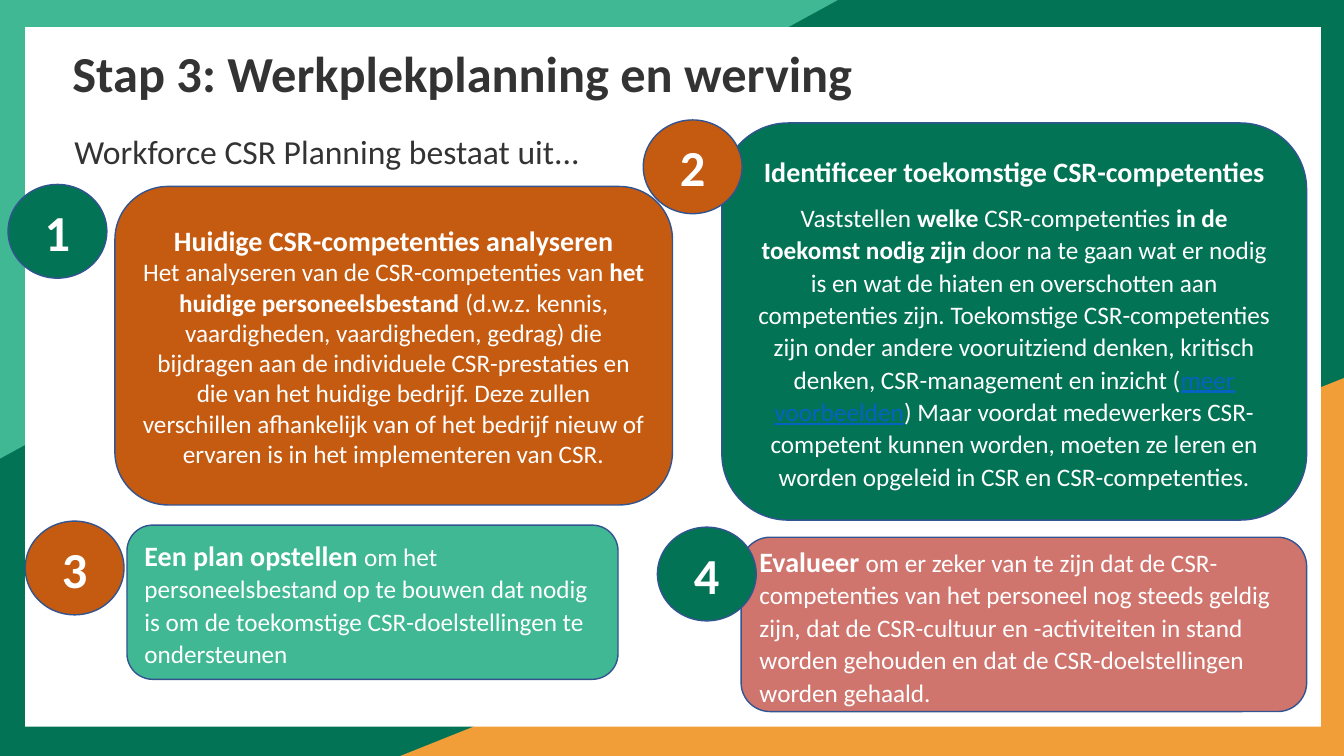
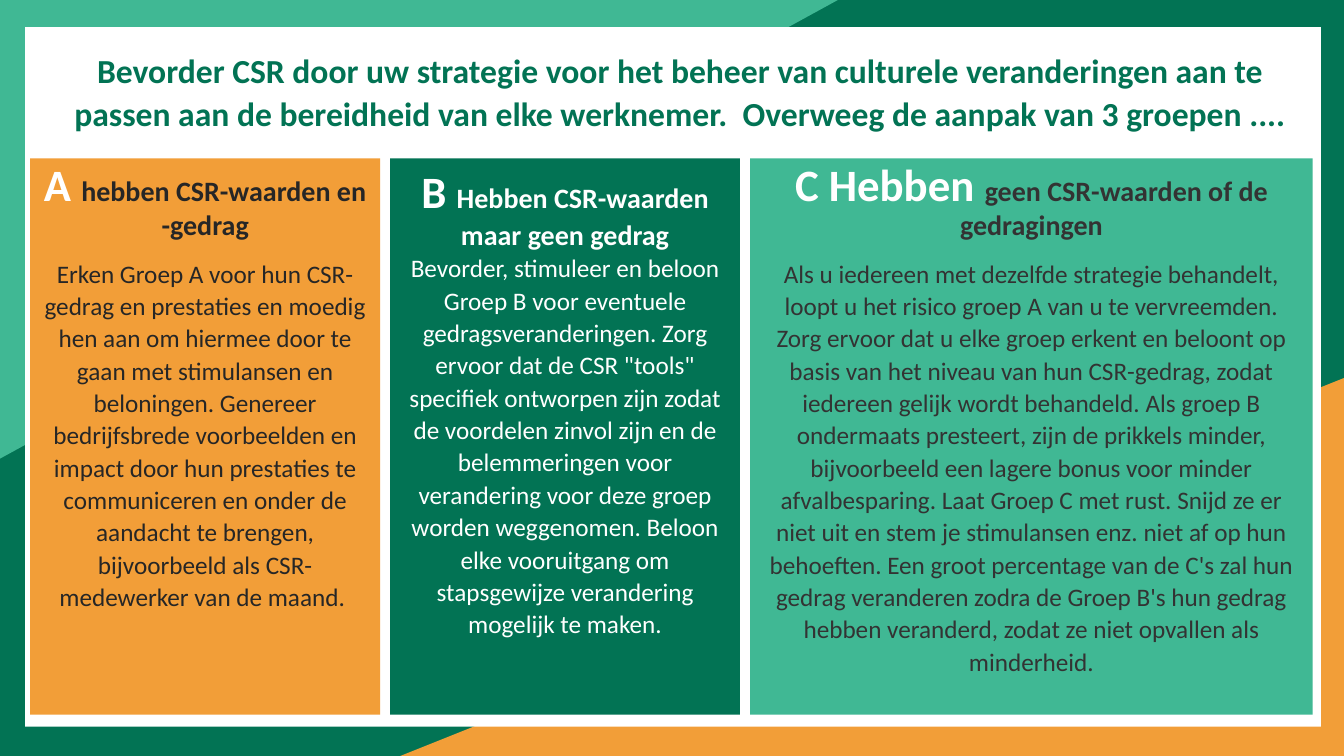
from pptx import Presentation
from pptx.dml.color import RGBColor
from pptx.enum.shapes import MSO_SHAPE as Shape
from pptx.enum.text import MSO_ANCHOR as Anchor, PP_ALIGN as Align
from pptx.util import Inches, Pt

# Shared look
WIDTH, HEIGHT = 13.33, 7.5
FONT = "Calibri"
GREEN = RGBColor(0x02, 0x73, 0x54)
MINT = RGBColor(0x40, 0xB8, 0x94)
ORANGE = RGBColor(0xF2, 0x9E, 0x38)
RUST = RGBColor(0xC5, 0x5A, 0x11)
ROSE = RGBColor(0xD0, 0x75, 0x6E)
OUTLINE = RGBColor(0x32, 0x54, 0x91)
LINK = RGBColor(0x05, 0x63, 0xC1)
INK = RGBColor(0x33, 0x33, 0x33)
DARK = RGBColor(0x26, 0x26, 0x26)
WHITE = RGBColor(0xFF, 0xFF, 0xFF)

# Run formats
HEAD = dict(size=20, bold=True)
BODY = dict(size=18)
STRONG = dict(size=18, bold=True)
LINKED = dict(size=18, color=LINK, underline=True)
LETTER = dict(size=32, bold=True, color=WHITE)
BADGE = dict(size=36, bold=True)

# Paragraph formats
PLAIN = {}
AIRY = dict(line=1.07, after=8.7)
TIGHT = dict(line=0.9, before=10)
LOOSE = dict(line=1.07, before=10, after=8.7)

# Slide 1 content
PLAN_TITLE = "Stap 3: Werkplekplanning en werving"
PLAN_INTRO = "Workforce CSR Planning bestaat uit..."
BADGE_SIZE = (0.98, 0.93)
STEPS = [
    dict(box=(1.14, 1.85, 5.53, 3.16), badge=(0.08, 1.83), fill=RUST,
         badge_fill=GREEN, align=Align.CENTER, text=[
             (PLAIN, [("Huidige CSR-competenties analyseren", HEAD)]),
             (PLAIN, [
                 ("Het analyseren van de CSR-competenties van ", BODY),
                 ("het huidige personeelsbestand ", STRONG),
                 ("(d.w.z. kennis, vaardigheden, vaardigheden, gedrag) die "
                  "bijdragen aan de individuele CSR-prestaties en die van het "
                  "huidige bedrijf. Deze zullen verschillen afhankelijk van of "
                  "het bedrijf nieuw of ervaren is in het implementeren van "
                  "CSR.", BODY)])]),
    dict(box=(7.16, 1.22, 5.8, 3.94), badge=(6.38, 1.19), fill=GREEN,
         badge_fill=RUST, align=Align.CENTER, text=[
             (AIRY, [("Identificeer toekomstige CSR-competenties", HEAD)]),
             (AIRY, [
                 ("Vaststellen ", BODY),
                 ("welke ", STRONG),
                 ("CSR-competenties ", BODY),
                 ("in de toekomst nodig zijn ", STRONG),
                 ("door na te gaan wat er nodig is en wat de hiaten en "
                  "overschotten aan competenties zijn. Toekomstige "
                  "CSR-competenties zijn onder andere vooruitziend denken, "
                  "kritisch denken, CSR-management en inzicht (", BODY),
                 ("meer voorbeelden", LINKED),
                 (") Maar voordat medewerkers CSR-competent kunnen worden, "
                  "moeten ze leren en worden opgeleid in CSR en "
                  "CSR-competenties.", BODY)])]),
    dict(box=(1.26, 5.21, 4.87, 1.53), badge=(0.25, 5.17), fill=MINT,
         badge_fill=RUST, align=Align.LEFT, text=[
             (AIRY, [
                 ("Een plan opstellen ", HEAD),
                 ("om het personeelsbestand op te bouwen dat nodig is om de "
                  "toekomstige CSR-doelstellingen te ondersteunen", BODY)])]),
    dict(box=(7.35, 5.33, 5.61, 1.73), badge=(6.52, 5.23), fill=ROSE,
         badge_fill=GREEN, align=Align.LEFT, text=[
             (AIRY, [
                 ("Evalueer ", HEAD),
                 ("om er zeker van te zijn dat de CSR-competenties van het "
                  "personeel nog steeds geldig zijn, dat de CSR-cultuur en "
                  "-activiteiten in stand worden gehouden en dat de "
                  "CSR-doelstellingen worden gehaald.", BODY)])]),
]

# Slide 2 content
GROUP_TITLE = ("Bevorder CSR door uw strategie voor het beheer van culturele "
               "veranderingen aan te passen aan de bereidheid van elke "
               "werknemer.  Overweeg de aanpak van 3 groepen ....")
GROUP_LEFT, GROUP_TOP, GROUP_HEIGHT, GROUP_GAP = 0.3, 1.57, 5.52, 0.1
GROUPS = [
    dict(width=3.47, fill=ORANGE, color=DARK, styles=(TIGHT, LOOSE),
         letter="A ", head="hebben CSR-waarden en -gedrag",
         body="Erken Groep A voor hun CSR-gedrag en prestaties en moedig hen "
              "aan om hiermee door te gaan met stimulansen en beloningen. "
              "Genereer bedrijfsbrede voorbeelden en impact door hun "
              "prestaties te communiceren en onder de aandacht te brengen, "
              "bijvoorbeeld als CSR-medewerker van de maand. "),
    dict(width=3.47, fill=GREEN, color=WHITE, styles=(PLAIN, AIRY),
         letter="B ", head="Hebben CSR-waarden maar geen gedrag",
         body="Bevorder, stimuleer en beloon Groep B voor eventuele "
              "gedragsveranderingen. Zorg ervoor dat de CSR \"tools\" "
              "specifiek ontworpen zijn zodat de voordelen zinvol zijn en de "
              "belemmeringen voor verandering voor deze groep worden "
              "weggenomen. Beloon elke vooruitgang om stapsgewijze "
              "verandering mogelijk te maken."),
    dict(width=5.58, fill=MINT, color=INK, styles=(TIGHT, LOOSE),
         letter="C Hebben ", head="geen CSR-waarden of de gedragingen",
         body="Als u iedereen met dezelfde strategie behandelt, loopt u het "
              "risico groep A van u te vervreemden. Zorg ervoor dat u elke "
              "groep erkent en beloont op basis van het niveau van hun "
              "CSR-gedrag, zodat iedereen gelijk wordt behandeld. Als groep B "
              "ondermaats presteert, zijn de prikkels minder, bijvoorbeeld "
              "een lagere bonus voor minder afvalbesparing. Laat Groep C met "
              "rust. Snijd ze er niet uit en stem je stimulansen enz. niet af "
              "op hun behoeften. Een groot percentage van de C's zal hun "
              "gedrag veranderen zodra de Groep B's hun gedrag hebben "
              "veranderd, zodat ze niet opvallen als minderheid."),
]


def write(holder, text, color=WHITE, align=Align.LEFT, anchor=Anchor.TOP):
    """Fill a shape with (paragraph format, [(words, run format)]) pairs."""
    frame = holder.text_frame
    frame.word_wrap = True
    frame.vertical_anchor = anchor
    for index, (style, runs) in enumerate(text):
        para = frame.add_paragraph() if index else frame.paragraphs[0]
        para.alignment = align
        para.line_spacing = style.get("line", 1.0)
        para.space_before = Pt(style.get("before", 0))
        para.space_after = Pt(style.get("after", 0))
        for words, look in runs:
            run = para.add_run()
            run.text = words
            font = run.font
            font.name, font.size = FONT, Pt(look["size"])
            font.bold = look.get("bold", False)
            font.underline = look.get("underline", False)
            font.color.rgb = look.get("color", color)


def draw(slide, kind, box, fill, outline=None):
    shape = slide.shapes.add_shape(kind, *map(Inches, box))
    shape.shadow.inherit = False
    shape.fill.solid()
    shape.fill.fore_color.rgb = fill
    if outline is None:
        shape.line.fill.background()
    else:
        shape.line.color.rgb = outline
        shape.line.width = Pt(1)
    return shape


def label(slide, box, words, look, style, **layout):
    holder = slide.shapes.add_textbox(*map(Inches, box))
    write(holder, [(style, [(words, look)])], **layout)


def framed_slide(deck):
    """Blank slide with the coloured border and white panel."""
    slide = deck.slides.add_slide(deck.slide_layouts[6])
    draw(slide, Shape.RECTANGLE, (0, 0, WIDTH, HEIGHT), GREEN)
    corners = [((3.97, HEIGHT / 2, WIDTH - 3.97, HEIGHT / 2), ORANGE, 0),
               ((0, 0, 8.31, 4.55), MINT, 180)]
    for box, fill, turn in corners:
        corner = draw(slide, Shape.ISOSCELES_TRIANGLE, box, fill)
        corner.adjustments[0] = 1
        corner.rotation = turn
    draw(slide, Shape.RECTANGLE, (0.25, 0.27, 12.85, 6.94), WHITE)
    return slide


def build_steps(deck):
    slide = framed_slide(deck)
    label(slide, (0.62, 0.44, 11.48, 0.92), PLAN_TITLE,
          dict(size=36, bold=True), TIGHT, color=INK)
    label(slide, (0.64, 1.22, 11.46, 0.6), PLAN_INTRO,
          dict(size=24), AIRY, color=INK)
    # Cards first, so that every badge lies on top
    for step in STEPS:
        card = draw(slide, Shape.ROUNDED_RECTANGLE, step["box"], step["fill"],
                    OUTLINE)
        write(card, step["text"], align=step["align"], anchor=Anchor.MIDDLE)
    for number, step in enumerate(STEPS, 1):
        badge = draw(slide, Shape.FLOWCHART_CONNECTOR,
                     step["badge"] + BADGE_SIZE, step["badge_fill"], OUTLINE)
        write(badge, [(PLAIN, [(str(number), BADGE)])], align=Align.CENTER,
              anchor=Anchor.MIDDLE)


def build_groups(deck):
    slide = framed_slide(deck)
    label(slide, (0.45, 0.42, 12.59, 1.1), GROUP_TITLE,
          dict(size=24, bold=True), LOOSE, color=GREEN, align=Align.CENTER)
    left = GROUP_LEFT
    for group in GROUPS:
        column = draw(slide, Shape.RECTANGLE,
                      (left, GROUP_TOP, group["width"], GROUP_HEIGHT),
                      group["fill"])
        head_style, body_style = group["styles"]
        write(column, [
            (head_style, [(group["letter"], LETTER), (group["head"], HEAD)]),
            (body_style, [(group["body"], BODY)]),
        ], color=group["color"], align=Align.CENTER)
        left += group["width"] + GROUP_GAP


def main():
    deck = Presentation()
    deck.slide_width, deck.slide_height = Inches(WIDTH), Inches(HEIGHT)
    build_steps(deck)
    build_groups(deck)
    deck.save("out.pptx")


if __name__ == "__main__":
    main()
